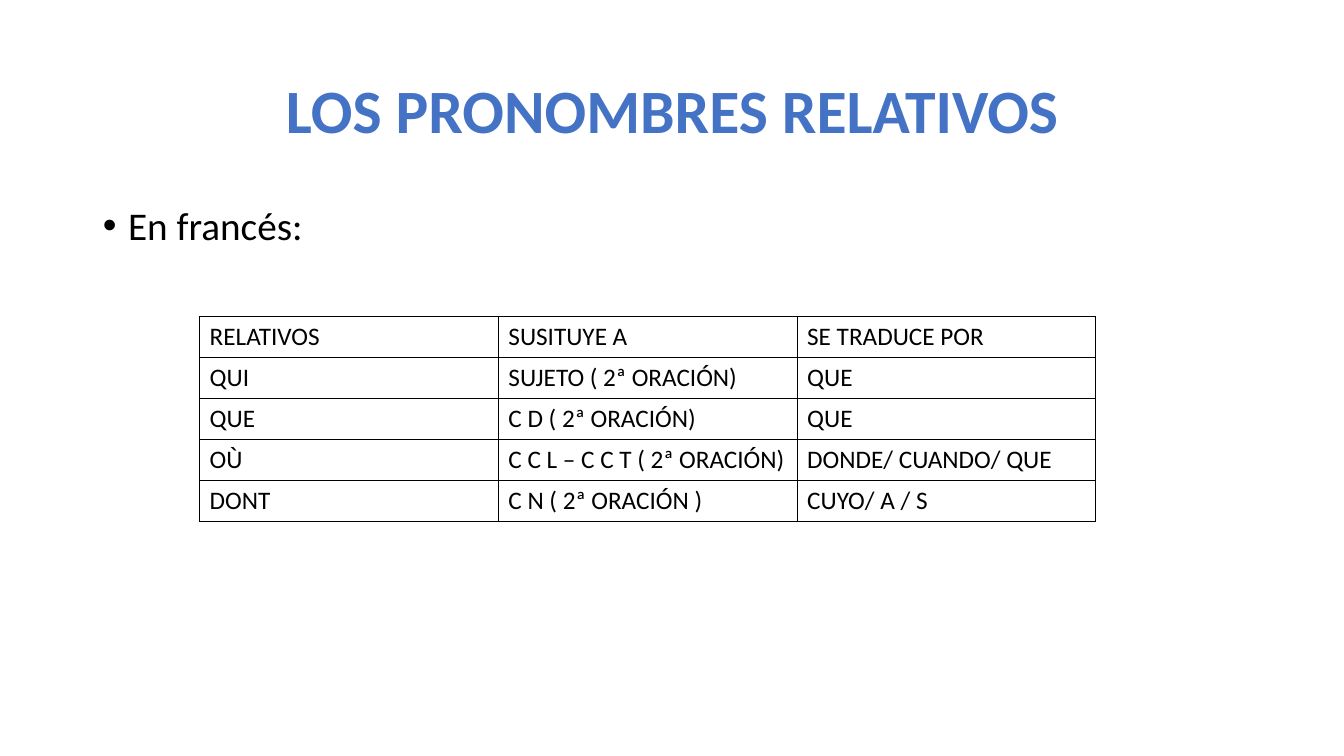
import dataclasses

import pptx
import pptx.dml.color
import pptx.enum.text
import pptx.oxml
import pptx.oxml.ns
import pptx.util

EMU_PER_PX = 9144
FONT = "Calibri"
BLACK = "000000"
BLUE = "4472C4"
BORDER_WIDTH = pptx.util.Pt(1)


@dataclasses.dataclass(frozen=True)
class Box:
    left: int
    top: int
    width: int
    height: int


@dataclasses.dataclass(frozen=True)
class Pronoun:
    relative: str
    replaces: str
    translation: str


TITLE_BOX = Box(92, 40, 1150, 145)
BODY_BOX = Box(92, 200, 1150, 476)
TABLE_BOX = Box(198, 314, 889, 203)

PRONOUNS = [
    Pronoun("RELATIVOS", "SUSITUYE A", "SE TRADUCE POR"),
    Pronoun("QUI", "SUJETO ( 2ª ORACIÓN)", "QUE"),
    Pronoun("QUE", "C D ( 2ª ORACIÓN)", "QUE"),
    Pronoun("OÙ", "C C L – C C T ( 2ª ORACIÓN)", "DONDE/ CUANDO/ QUE"),
    Pronoun("DONT", "C N ( 2ª ORACIÓN )", "CUYO/ A / S"),
]


def px(length: int) -> pptx.util.Emu:
    return pptx.util.Emu(length * EMU_PER_PX)


def color(value: str) -> pptx.dml.color.RGBColor:
    return pptx.dml.color.RGBColor.from_string(value)


def write_text(frame, text: str, *, size: int, fill: str = BLACK, bold: bool = False,
               align=pptx.enum.text.PP_ALIGN.LEFT, line_spacing: float = 1.0,
               space_before: int = 0):
    paragraph = frame.paragraphs[0]
    paragraph.alignment = align
    paragraph.line_spacing = line_spacing
    paragraph.space_before = pptx.util.Pt(space_before)
    run = paragraph.add_run()
    run.text = text
    run.font.name = FONT
    run.font.size = pptx.util.Pt(size)
    run.font.bold = bold
    run.font.color.rgb = color(fill)
    return paragraph


def place(shape, box: Box, anchor) -> None:
    shape.left, shape.top = px(box.left), px(box.top)
    shape.width, shape.height = px(box.width), px(box.height)
    shape.text_frame.auto_size = pptx.enum.text.MSO_AUTO_SIZE.NONE
    shape.text_frame.vertical_anchor = anchor


def set_bullet(paragraph, indent: int) -> None:
    properties = paragraph._p.get_or_add_pPr()
    properties.set("marL", str(px(indent)))
    properties.set("indent", str(-px(indent)))
    namespace = pptx.oxml.ns.nsdecls("a")
    properties.append(pptx.oxml.parse_xml(f'<a:buFont {namespace} typeface="Arial"/>'))
    properties.append(pptx.oxml.parse_xml(f'<a:buChar {namespace} char="•"/>'))


def set_borders(cell) -> None:
    properties = cell._tc.get_or_add_tcPr()
    for side in ("lnL", "lnR", "lnT", "lnB"):
        properties.append(pptx.oxml.parse_xml(
            f'<a:{side} {pptx.oxml.ns.nsdecls("a")} w="{BORDER_WIDTH}">'
            f'<a:solidFill><a:srgbClr val="{BLACK}"/></a:solidFill></a:{side}>'))


def add_pronoun_table(slide, box: Box, pronouns: list[Pronoun]) -> None:
    column_count = len(dataclasses.fields(Pronoun))
    table = slide.shapes.add_table(
        len(pronouns), column_count,
        px(box.left), px(box.top), px(box.width), px(box.height)).table
    table.first_row = False
    table.horz_banding = False
    for row, pronoun in zip(table.rows, pronouns):
        for cell, text in zip(row.cells, dataclasses.astuple(pronoun)):
            write_text(cell.text_frame, text, size=18)
            set_borders(cell)
            cell.fill.background()


def main() -> None:
    presentation = pptx.Presentation()
    presentation.slide_width, presentation.slide_height = px(1333), px(750)
    slide = presentation.slides.add_slide(presentation.slide_layouts[1])

    title, body = slide.placeholders
    place(title, TITLE_BOX, pptx.enum.text.MSO_ANCHOR.MIDDLE)
    write_text(title.text_frame, "LOS PRONOMBRES RELATIVOS", size=44, fill=BLUE, bold=True,
               align=pptx.enum.text.PP_ALIGN.CENTER, line_spacing=0.9)

    place(body, BODY_BOX, pptx.enum.text.MSO_ANCHOR.TOP)
    set_bullet(write_text(body.text_frame, "En francés:", size=28,
                          line_spacing=0.9, space_before=10), 25)

    add_pronoun_table(slide, TABLE_BOX, PRONOUNS)
    presentation.save("out.pptx")


if __name__ == "__main__":
    main()
